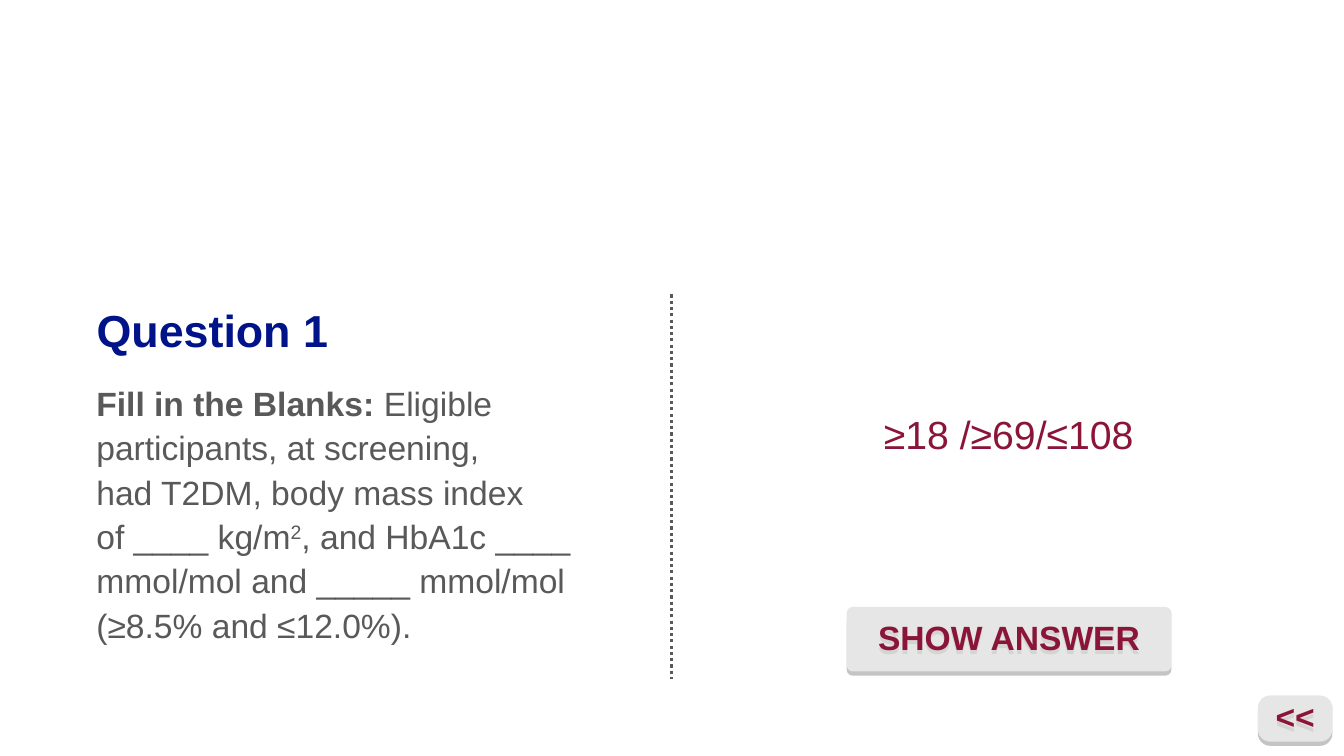
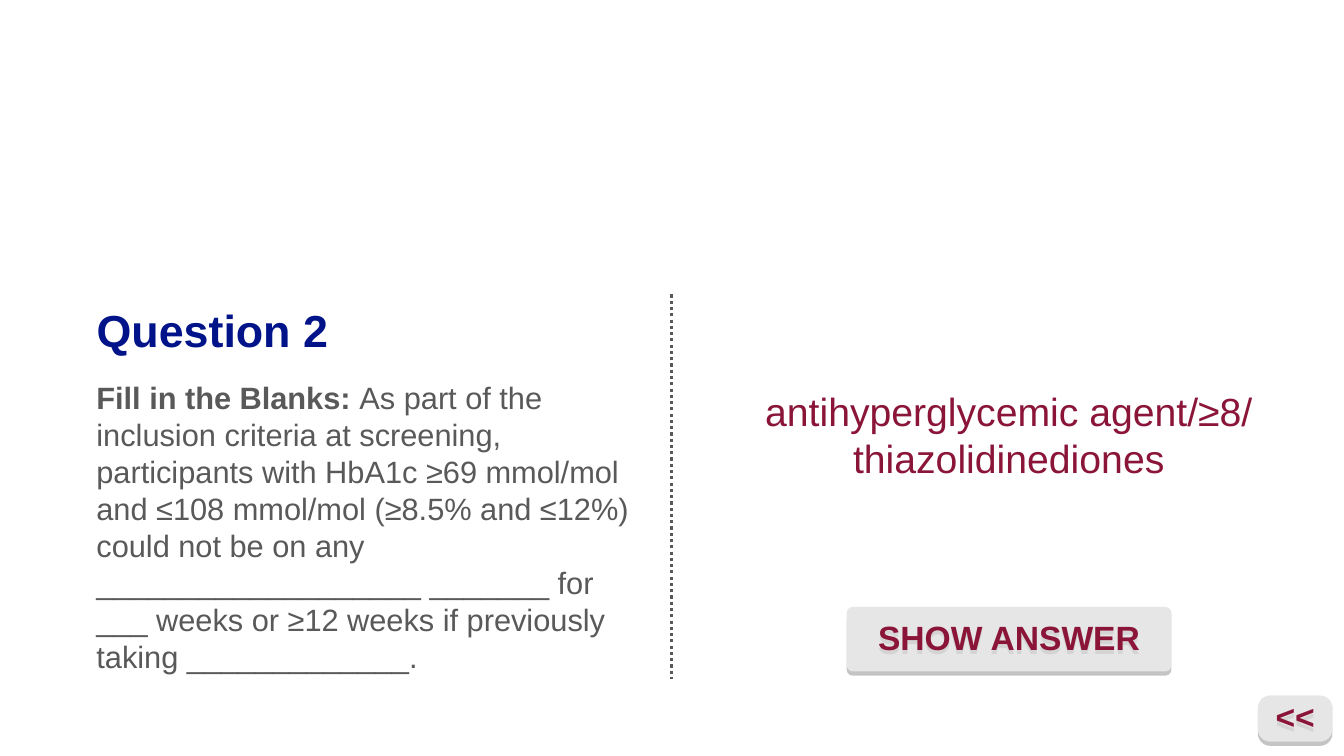
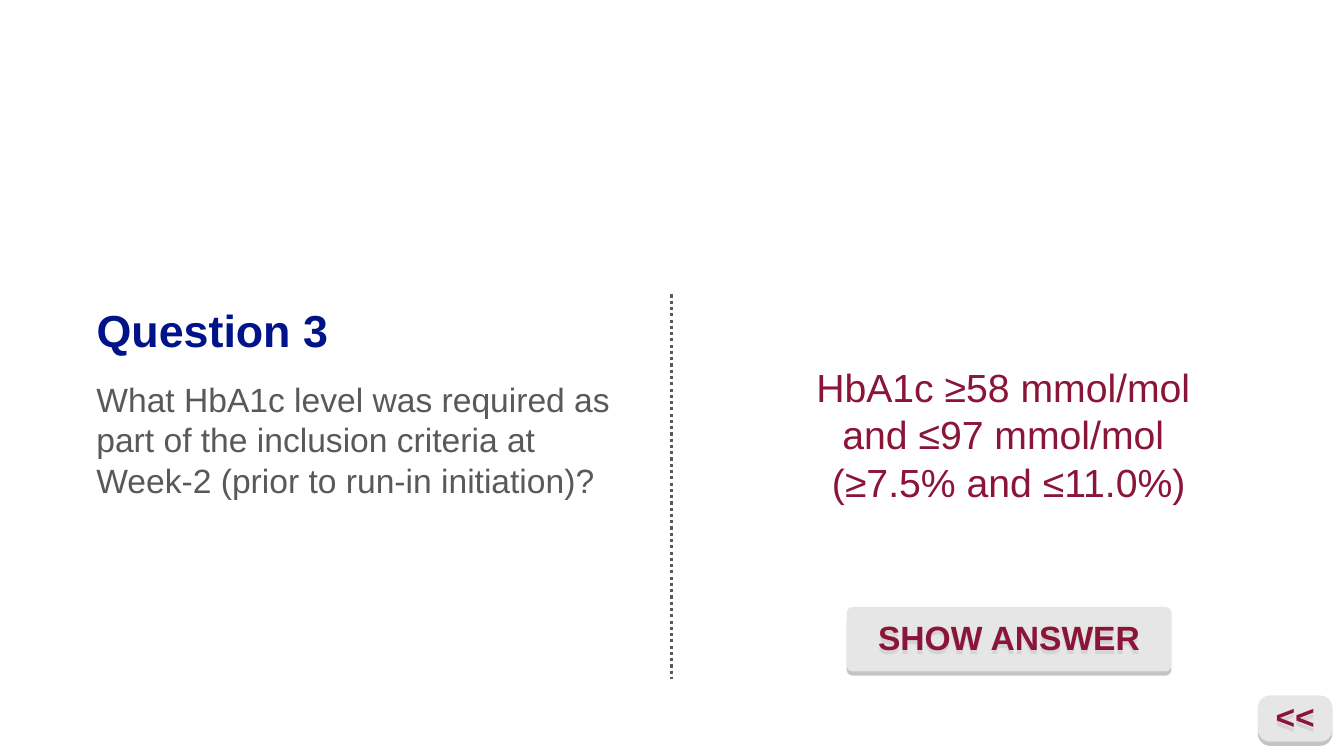
from lxml.etree import SubElement
from pptx import Presentation
from pptx.dml.color import RGBColor
from pptx.enum.dml import MSO_LINE
from pptx.enum.shapes import MSO_CONNECTOR, MSO_SHAPE
from pptx.enum.text import MSO_ANCHOR, MSO_AUTO_SIZE, PP_ALIGN
from pptx.oxml.ns import qn
from pptx.util import Cm, Pt

FONT = "Arial"
NAVY, MAROON, GREY, DOTS, WHITE, BLACK = (
    "001389", "8A1538", "595959", "58595B", "FFFFFF", "000000")

BOLD, PLAIN, SUPER = "bold", "plain", "super"
QUESTIONS = [
    {
        "title": "Question 1",
        "prompt": [
            ("Fill in the Blanks: ", BOLD),
            ("Eligible participants, at screening, \nhad T2DM, body mass index \nof ____ kg/m", PLAIN),
            ("2", SUPER),
            (", and HbA1c ____ mmol/mol and _____ mmol/mol (≥8.5% and ≤12.0%).", PLAIN),
        ],
        "size": 24, "width": 12.57, "spacing": 1.1,
        "answer": "≥18 /≥69/≤108",
    },
    {
        "title": "Question 2",
        "prompt": [
            ("Fill in the Blanks: ", BOLD),
            ("As part of the inclusion criteria at screening, participants with HbA1c "
             "≥69 mmol/mol and ≤108 mmol/mol (≥8.5% and ≤12%) could not be on any "
             "___________________ _______ for \n___ weeks or ≥12 weeks if previously "
             "taking _____________.", PLAIN),
        ],
        "size": 22, "width": 14.1, "spacing": 1.0,
        "answer": "antihyperglycemic agent/≥8/ thiazolidinediones",
    },
    {
        "title": "Question 3",
        "prompt": [
            ("What HbA1c level was required as part of the inclusion criteria at "
             "Week-2 (prior to run-in initiation)?", PLAIN),
        ],
        "size": 24, "width": 13.64, "spacing": 1.0,
        "answer": "HbA1c ≥58 mmol/mol \nand ≤97 mmol/mol \n(≥7.5% and ≤11.0%)",
    },
]

LEFT, TOP = 2.18, 7.49
TITLE_BOX = (LEFT, TOP, 13.64, 1.63)
PROMPT_TOP, PROMPT_HEIGHT = 9.42, 7.34
ANSWER_BOX = (18.31, TOP, 14.22, 6.91)
DIVIDER = (16.92, 7.42, 16.92, 17.12)
BUTTONS = [
    ("SHOW ANSWER", (21.34, 15.19, 8.18, 1.73), 0.086),
    ("<<", (31.7, 17.42, 1.88, 1.27), 0.248),
]


def color(hex_code):
    return RGBColor.from_string(hex_code)


def cm(lengths):
    return [Cm(length) for length in lengths]


def write(frame, runs, size, hex_code, align=PP_ALIGN.LEFT,
          anchor=MSO_ANCHOR.TOP, spacing=1.0):
    frame.word_wrap = True
    frame.auto_size = MSO_AUTO_SIZE.NONE
    frame.vertical_anchor = anchor
    paragraph = frame.paragraphs[0]
    paragraph.alignment = align
    paragraph.line_spacing = spacing
    paragraph.space_before = Pt(0)
    for text, style in runs:
        for index, line in enumerate(text.split("\n")):
            if index:
                paragraph.add_line_break()
            run = paragraph.add_run()
            run.text = line
            run.font.name = FONT
            run.font.size = Pt(size)
            run.font.bold = style == BOLD
            run.font.color.rgb = color(hex_code)
            if style == SUPER:
                run._r.get_or_add_rPr().set("baseline", "30000")
    for line_break in paragraph._p.findall(qn("a:br")):
        SubElement(line_break, qn("a:rPr")).set("sz", str(size * 100))


def add_title(slide, text):
    title = slide.shapes.title
    title.left, title.top, title.width, title.height = cm(TITLE_BOX)
    write(title.text_frame, [(text, BOLD)], 32, NAVY)


def add_text(slide, box, *content, **layout):
    write(slide.shapes.add_textbox(*cm(box)).text_frame, *content, **layout)


def add_divider(slide):
    divider = slide.shapes.add_connector(MSO_CONNECTOR.STRAIGHT, *cm(DIVIDER))
    divider.line.color.rgb = color(DOTS)
    divider.line.width = Pt(2.25)
    divider.line.dash_style = MSO_LINE.ROUND_DOT
    SubElement(divider._element.spPr, qn("a:effectLst"))


def set_alpha(color_element, percent):
    SubElement(color_element, qn("a:alpha")).set("val", str(percent * 1000))


def add_button(slide, label, box, rounding):
    button = slide.shapes.add_shape(MSO_SHAPE.ROUNDED_RECTANGLE, *cm(box))
    button.adjustments[0] = rounding
    button.fill.solid()
    button.fill.fore_color.rgb = color(WHITE)
    button.line.fill.background()
    button.shadow.inherit = False
    properties = button._element.spPr
    set_alpha(properties.find(qn("a:solidFill"))[0], 58)
    shadow = SubElement(properties.find(qn("a:effectLst")), qn("a:outerShdw"),
                        blurRad="0", dist=str(Pt(3)), dir="5400000",
                        algn="t", rotWithShape="0")
    set_alpha(SubElement(shadow, qn("a:srgbClr"), val=BLACK), 40)
    write(button.text_frame, [(label, BOLD)], 24, MAROON,
          PP_ALIGN.CENTER, MSO_ANCHOR.MIDDLE)


def main():
    deck = Presentation()
    deck.slide_width, deck.slide_height = cm((33.87, 19.05))
    title_only = deck.slide_layouts[5]
    for question in QUESTIONS:
        slide = deck.slides.add_slide(title_only)
        add_divider(slide)
        add_title(slide, question["title"])
        add_text(slide, (LEFT, PROMPT_TOP, question["width"], PROMPT_HEIGHT),
                 question["prompt"], question["size"], GREY,
                 spacing=question["spacing"])
        add_text(slide, ANSWER_BOX, [(question["answer"], PLAIN)], 28, MAROON,
                 align=PP_ALIGN.CENTER, anchor=MSO_ANCHOR.MIDDLE)
        for button in BUTTONS:
            add_button(slide, *button)
    deck.save("out.pptx")


if __name__ == "__main__":
    main()
